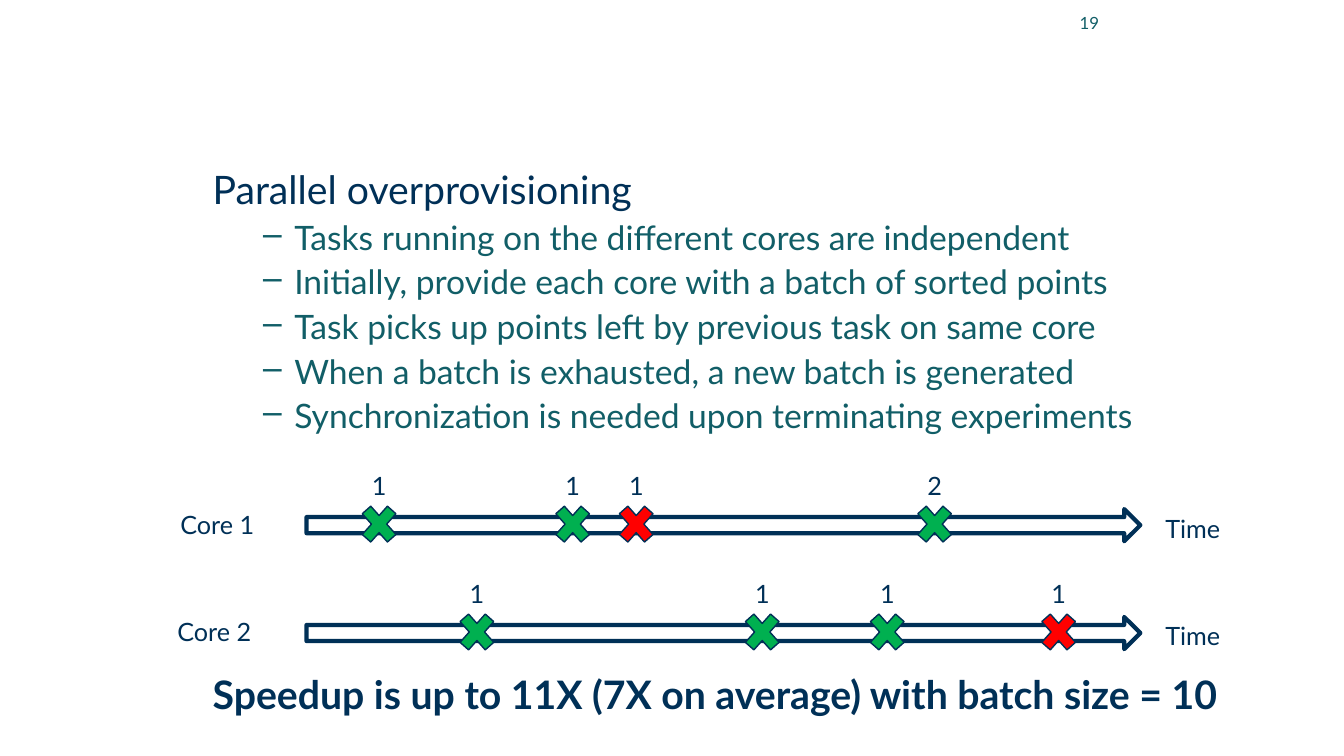
"""Build the slide on parallel overprovisioning with two core timelines."""
from lxml.etree import SubElement
from pptx import Presentation
from pptx.dml.color import RGBColor
from pptx.enum.shapes import MSO_SHAPE as Shape
from pptx.enum.text import MSO_ANCHOR as Anchor, PP_ALIGN as Align
from pptx.oxml.ns import qn
from pptx.util import Inches, Pt

COLORS = {"navy": "003057", "teal": "115E67", "green": "00B050", "red": "FF0000"}
FONT = "Lato"
HEADING = "Parallel overprovisioning"
POINTS = [
    "Tasks running on the different cores are independent",
    "Initially, provide each core with a batch of sorted points",
    "Task picks up points left by previous task on same core",
    "When a batch is exhausted, a new batch is generated",
    "Synchronization is needed upon terminating experiments",
]
CONCLUSION = "Speedup is up to 11X (7X on average) with batch size = 10"
PAGE_NUMBER = "19"
TIMELINES = [
    ("Core 1", 1.13, [(5.44, "1", "green"), (6.07, "1", "red"),
                      (9.03, "2", "green"), (3.52, "1", "green")]),
    ("Core 2", 1.10, [(4.49, "1", "green"), (7.32, "1", "green"),
                      (10.26, "1", "red"), (8.56, "1", "green")]),
]
FIRST_ROW, ROW_PITCH = 4.62, 1.07


def rgb(name):
    return RGBColor.from_string(COLORS[name])


def style(para, size, color, bold=False):
    for span in para.runs:
        span.font.name = FONT
        span.font.size = Pt(size)
        span.font.bold = bold
        span.font.color.rgb = rgb(color)


def add_text(shapes, text, place, size=18, color="navy", align=Align.LEFT,
             bold=False, inset=True):
    box = shapes.add_textbox(*map(Inches, place))
    frame = box.text_frame
    frame.word_wrap = True
    if not inset:
        frame.margin_left = frame.margin_right = 0
        frame.margin_top = frame.margin_bottom = 0
    frame.text = text
    para = frame.paragraphs[0]
    para.alignment = align
    style(para, size, color, bold)
    return frame


def add_outlined(shapes, kind, place, width, fill=None):
    shape = shapes.add_shape(kind, *map(Inches, place))
    shape.shadow.inherit = False
    shape.line.color.rgb = rgb("navy")
    shape.line.width = Pt(width)
    if fill:
        shape.fill.solid()
        shape.fill.fore_color.rgb = rgb(fill)
    else:
        shape.fill.background()


def add_point(frame, text):
    para = frame.add_paragraph()
    para.text = text
    para.level = 1
    para.line_spacing = 0.9
    para.space_before = Pt(6)
    props = para._p.get_or_add_pPr()
    props.set("marL", str(Inches(0.81)))
    props.set("indent", str(Inches(-0.31)))
    tint = SubElement(props, qn("a:buClr"))
    SubElement(tint, qn("a:srgbClr"), val=COLORS["teal"])
    SubElement(props, qn("a:buChar"), char="–")
    style(para, 24, "teal")


def add_timeline(shapes, top, label, label_left, marks):
    add_outlined(shapes, Shape.RIGHT_ARROW, (3.04, top + 0.43, 8.27, 0.32), 3)
    for left, count, color in marks:
        mark = shapes.add_group_shape().shapes
        add_outlined(mark, Shape.MATH_MULTIPLY, (left, top + 0.31, 0.48, 0.54), 1, color)
        add_text(mark, count, (left + 0.07, top, 0.48, 0.4))
    add_text(shapes, "Time", (11.46, top + 0.42, 0.96, 0.4))
    add_text(shapes, label, (label_left, top + 0.38, 2.05, 0.4), align=Align.CENTER)


def main():
    deck = Presentation()
    deck.slide_width, deck.slide_height = Inches(13.33), Inches(7.5)
    page = deck.slides.add_slide(deck.slide_layouts[6])
    shapes = page.shapes

    body = add_text(shapes, HEADING, (2.11, 1.69, 11, 2.8), 28, inset=False)
    body.paragraphs[0].line_spacing = 0.9
    for text in POINTS:
        add_point(body, text)
    closing = add_text(shapes, CONCLUSION, (2.11, 6.7, 11, 0.5), 28, bold=True, inset=False)
    closing.paragraphs[0].line_spacing = 0.9
    number = add_text(shapes, PAGE_NUMBER, (9.78, -0.02, 1.22, 0.5), 12, "teal", Align.RIGHT)
    number.vertical_anchor = Anchor.MIDDLE

    for row, timeline in enumerate(TIMELINES):
        add_timeline(shapes, FIRST_ROW + row * ROW_PITCH, *timeline)
    deck.save("out.pptx")


if __name__ == "__main__":
    main()
